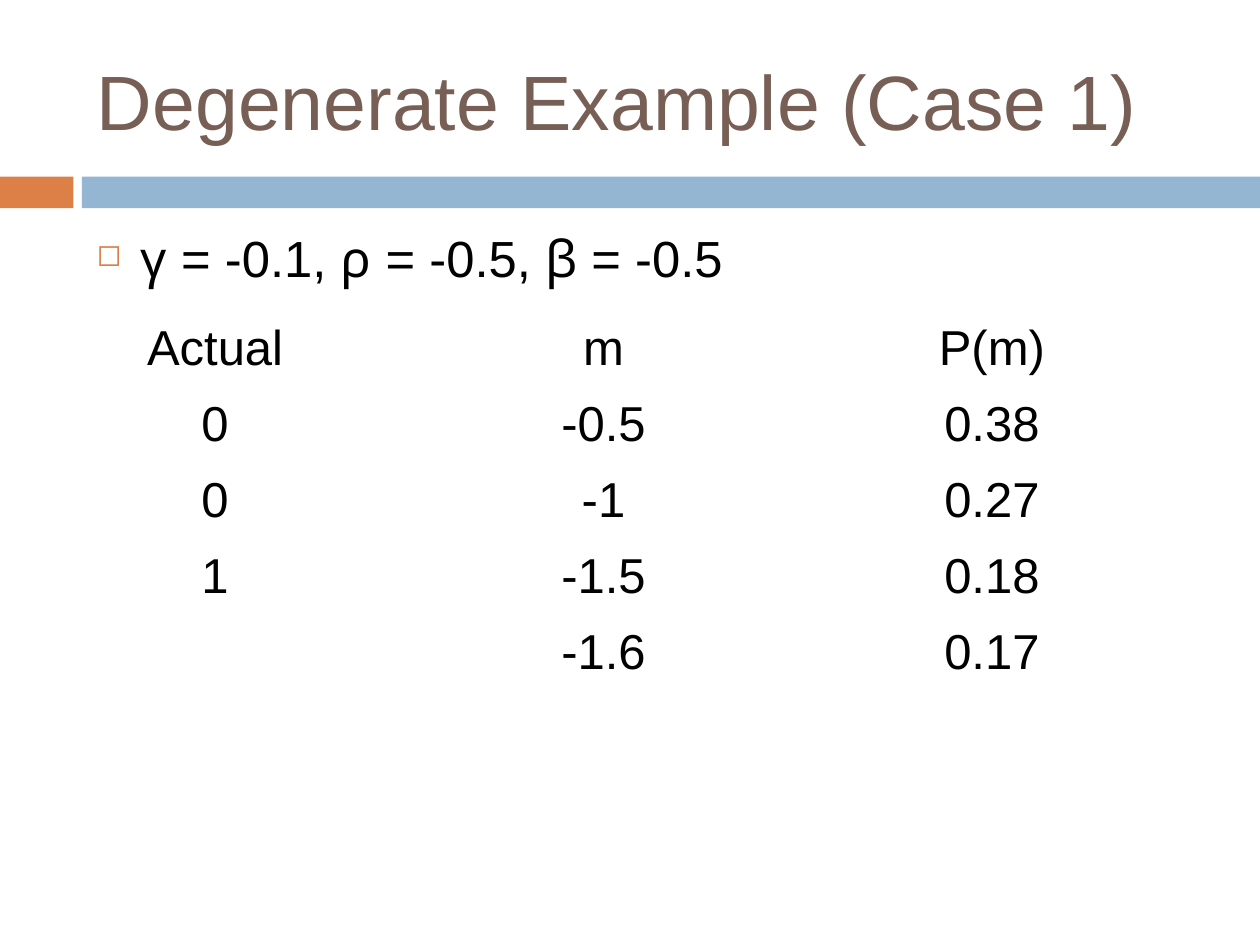
import pptx
import pptx.dml.color
import pptx.enum.shapes
import pptx.enum.text
import pptx.oxml
import pptx.oxml.ns
import pptx.util
from pptx.util import Cm

RGBColor = pptx.dml.color.RGBColor
ORANGE = RGBColor(0xDD, 0x80, 0x47)
BLUE = RGBColor(0x94, 0xB6, 0xD2)
BROWN = RGBColor(0x77, 0x5F, 0x55)
BLACK = RGBColor(0, 0, 0)

LATIN_FONT = "Arial"
GREEK_FONT = "Noto Sans"
ALIGN = pptx.enum.text.PP_ALIGN
ANCHOR = pptx.enum.text.MSO_ANCHOR


class SlideBuilder:
    """Holds the text style and the slide being built."""

    def __init__(self, slide):
        self.slide = slide

    def style(self, font, size, color, name=LATIN_FONT):
        font.name = name
        font.size = pptx.util.Pt(size)
        font.color.rgb = color

    def title(self, text, left, top, width, height):
        title = self.slide.shapes.title
        title.left, title.top = Cm(left), Cm(top)
        title.width, title.height = Cm(width), Cm(height)
        frame = title.text_frame
        frame.text = text
        frame.vertical_anchor = ANCHOR.MIDDLE
        frame.auto_size = pptx.enum.text.MSO_AUTO_SIZE.NONE
        frame.paragraphs[0].alignment = ALIGN.LEFT
        self.style(frame.paragraphs[0].runs[0].font, 44, BROWN)

    def bar(self, left, top, width, height, color):
        bar = self.slide.shapes.add_shape(
            pptx.enum.shapes.MSO_SHAPE.RECTANGLE,
            Cm(left), Cm(top), Cm(width), Cm(height))
        bar.shadow.inherit = False
        bar.fill.solid()
        bar.fill.fore_color.rgb = color
        bar.line.fill.background()

    def bullet(self, pieces, left, top, width, height):
        box = self.slide.shapes.add_textbox(
            Cm(left), Cm(top), Cm(width), Cm(height))
        box.text_frame.word_wrap = True
        paragraph = box.text_frame.paragraphs[0]
        properties = paragraph._p.get_or_add_pPr()
        indent = Cm(0.89)
        properties.set("marL", str(indent))
        properties.set("indent", str(-indent))
        ns = pptx.oxml.ns.nsdecls("a")
        for xml in (
            f'<a:buClr {ns}><a:srgbClr val="{ORANGE}"/></a:buClr>',
            f'<a:buSzPct {ns} val="60000"/>',
            f'<a:buChar {ns} char="◻"/>',
        ):
            properties.append(pptx.oxml.parse_xml(xml))
        for text, font_name in pieces:
            run = paragraph.add_run()
            run.text = text
            self.style(run.font, 29, BLACK, font_name)

    def table(self, rows, row_count, left, top, column_width, row_height):
        column_count = len(rows[0])
        table = self.slide.shapes.add_table(
            row_count, column_count, Cm(left), Cm(top),
            Cm(column_width * column_count), Cm(row_height * row_count)).table
        table.first_row = False
        table.horz_banding = False
        for cell in table.iter_cells():
            cell.fill.background()
        for r, values in enumerate(rows):
            for c, value in enumerate(values):
                if not value:
                    continue
                cell = table.cell(r, c)
                cell.text = value
                paragraph = cell.text_frame.paragraphs[0]
                paragraph.alignment = ALIGN.CENTER
                self.style(paragraph.runs[0].font, 28, BLACK)


def main():
    presentation = pptx.Presentation()
    presentation.slide_width, presentation.slide_height = Cm(25.4), Cm(19.05)
    title_only = presentation.slide_layouts[5]
    builder = SlideBuilder(presentation.slides.add_slide(title_only))

    # Heading and the two-colour band under it
    builder.bar(0, 3.56, 1.48, 0.64, ORANGE)
    builder.bar(1.65, 3.56, 23.75, 0.64, BLUE)
    builder.title("Degenerate Example (Case 1)", 1.7, 0.64, 22.66, 2.74)

    # Parameters, with Greek letters in their own font
    parameters = [("γ", " = -0.1, "), ("ρ", " = -0.5, "), ("β", " = -0.5")]
    pieces = []
    for letter, value in parameters:
        pieces += [(letter, GREEK_FONT), (value, LATIN_FONT)]
    builder.bullet(pieces, 1.7, 4.45, 22.66, 12.5)

    # Outcomes and probabilities; the last three rows stay empty
    outcomes = [
        ("Actual", "m", "P(m)"),
        ("0", "-0.5", "0.38"),
        ("0", "-1", "0.27"),
        ("1", "-1.5", "0.18"),
        ("", "-1.6", "0.17"),
    ]
    builder.table(outcomes, 8, 0.42, 6.35, 7.83, 1.53)

    presentation.save("out.pptx")


if __name__ == "__main__":
    main()
